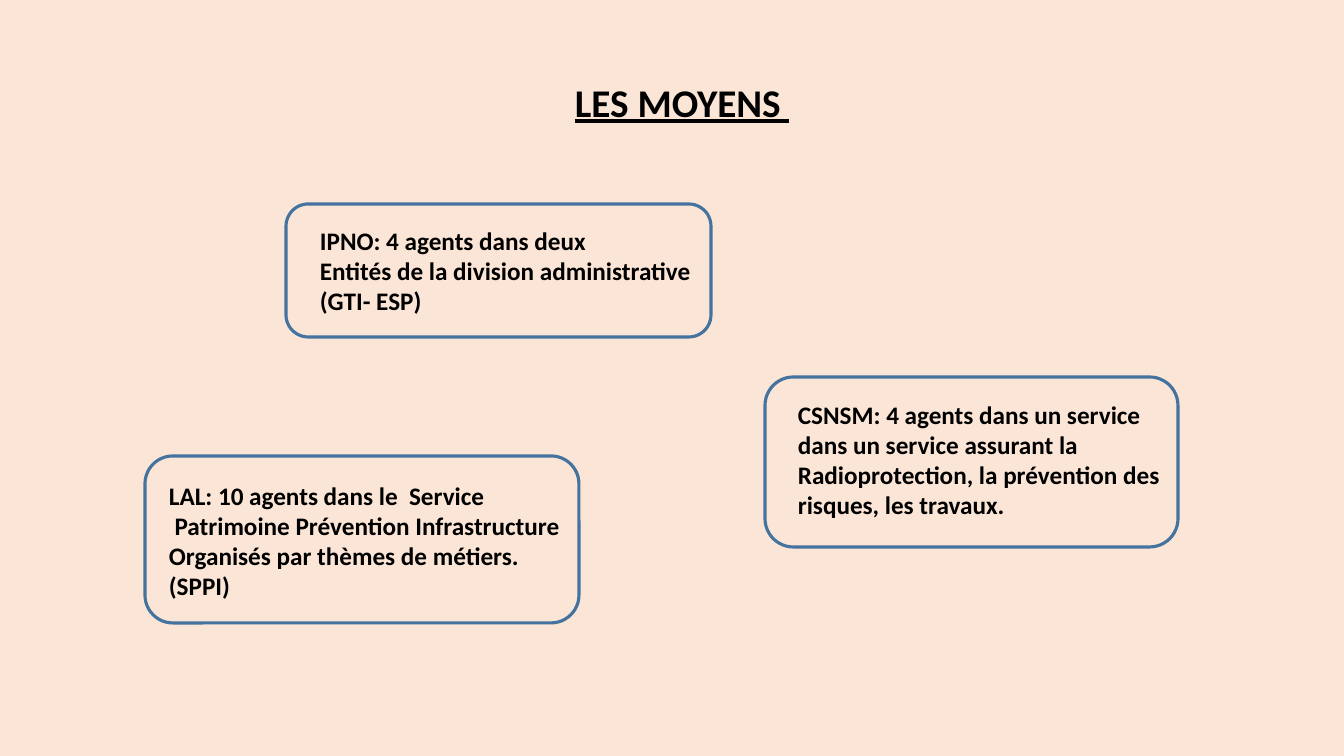
from pptx import Presentation
from pptx import util as u
from pptx.dml.color import RGBColor
from pptx.enum import shapes, text

PX = 914400 / 100.8
COLORS = {"background": "FBE5D6", "outline": "43739E", "ink": "000000"}

# Frame bounds, text bounds, wrapping and lines of each laboratory
LABS = [
    ((286, 204, 425, 133), (310, 220, 394, 102), True,
     ["IPNO: 4 agents dans deux",
      "Entités de la division administrative",
      "(GTI- ESP)"]),
    ((765, 377, 413, 170), (788, 394, 403, 163), True,
     ["CSNSM: 4 agents dans un service dans un service assurant la "
      "Radioprotection, la prévention des risques, les travaux."]),
    ((145, 456, 434, 167), (159, 475, 414, 132), False,
     ["LAL: 10 agents dans le  Service",
      " Patrimoine Prévention Infrastructure",
      "Organisés par thèmes de métiers.",
      "(SPPI)"]),
]


def to_emu(bounds):
    return [u.Emu(round(length * PX)) for length in bounds]


def color(name):
    return RGBColor.from_string(COLORS[name])


def add_text(slide, bounds, lines, size=18, underline=False, wrap=True):
    """Add a bold text box with one paragraph per line."""
    frame = slide.shapes.add_textbox(*to_emu(bounds)).text_frame
    frame.word_wrap = wrap
    frame.auto_size = text.MSO_AUTO_SIZE.SHAPE_TO_FIT_TEXT
    for index, line in enumerate(lines):
        para = frame.add_paragraph() if index else frame.paragraphs[0]
        span = para.add_run()
        span.text = line
        span.font.name = "Calibri"
        span.font.size = u.Pt(size)
        span.font.bold = True
        span.font.underline = underline
        span.font.color.rgb = color("ink")


def add_rounded_frame(slide, bounds):
    box = slide.shapes.add_shape(
        shapes.MSO_SHAPE.ROUNDED_RECTANGLE, *to_emu(bounds))
    box.shadow.inherit = False
    box.fill.background()
    box.line.color.rgb = color("outline")
    box.line.width = u.Pt(2.25)


def main():
    deck = Presentation()
    deck.slide_width, deck.slide_height = to_emu((1344, 756))
    slide = deck.slides.add_slide(deck.slide_layouts[6])
    slide.background.fill.solid()
    slide.background.fill.fore_color.rgb = color("background")

    for frame_bounds, text_bounds, wrap, lines in LABS:
        add_text(slide, text_bounds, lines, wrap=wrap)
        add_rounded_frame(slide, frame_bounds)
    add_text(slide, (565, 73, 238, 57), ["LES MOYENS "],
             size=28, underline=True, wrap=False)

    deck.save("out.pptx")


if __name__ == "__main__":
    main()
